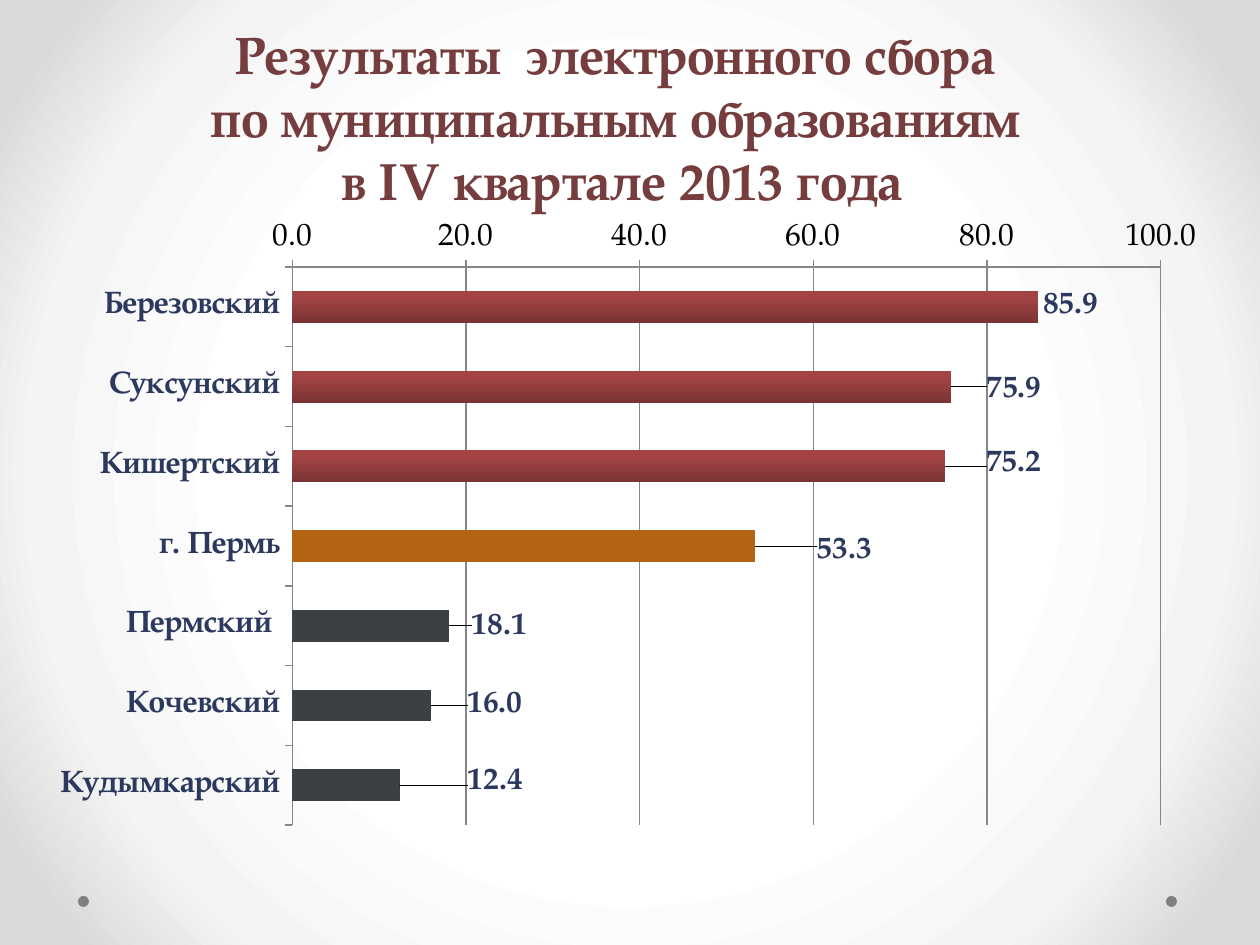
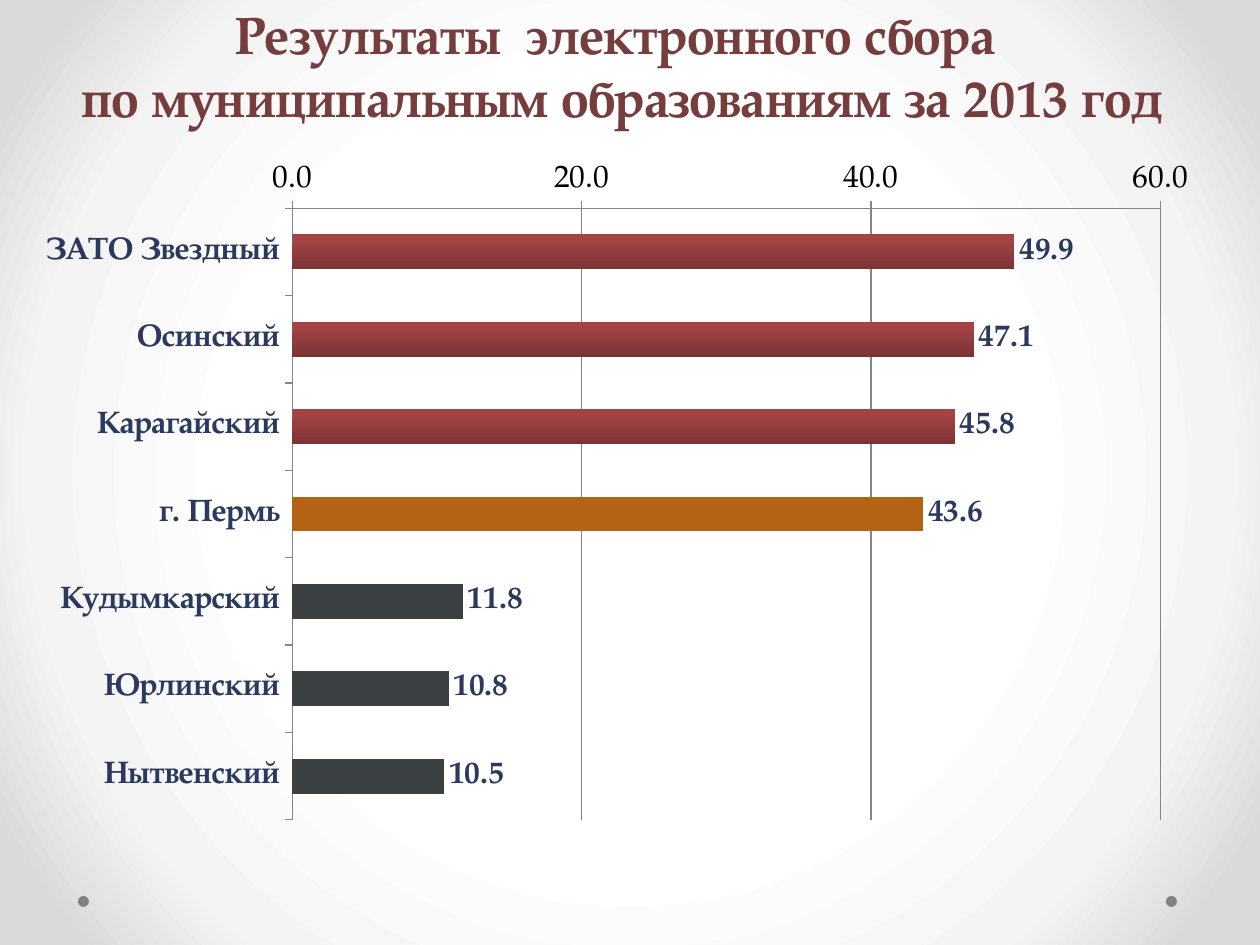
from dataclasses import dataclass

from lxml import etree
from pptx import Presentation
from pptx.chart.chart import Chart
from pptx.chart.data import CategoryChartData
from pptx.dml.color import RGBColor
from pptx.enum.chart import XL_CHART_TYPE as ChartType
from pptx.enum.chart import XL_LABEL_POSITION as LabelPosition
from pptx.enum.chart import XL_TICK_MARK as TickMark
from pptx.enum.shapes import MSO_SHAPE as Shape
from pptx.enum.text import MSO_ANCHOR as Anchor
from pptx.enum.text import MSO_AUTO_SIZE as AutoSize
from pptx.enum.text import PP_ALIGN as Align
from pptx.oxml import parse_xml
from pptx.oxml.ns import nsdecls, qn
from pptx.slide import Slide, SlideMaster
from pptx.util import Emu, Pt

# Shared look
FONT = "TeX Gyre Pagella"
TITLE_COLOR, LABEL_COLOR, AXIS_TEXT = "753D3D", "2C395E", "000000"
GRID_COLOR, DOT_COLOR = "868686", "808080"
LEADER_TOP, LEADER_BOTTOM = "A34343", "7A3335"
CITY_COLOR, LAST_COLOR = "B26314", "3B4042"
LEADERS = 3
BACKGROUND_STOPS = ((50, "FFFFFF"), (76, "F4F4F4"), (92, "DADADA"))
PLOT_AREA = {"x": 0.221, "y": 0.045, "w": 0.746, "h": 0.871}
CHART_LEFT, CHART_WIDTH, CHART_BOTTOM = 35, 1164, 879
TITLE_WIDTH = 1245
DOT_LEFTS, DOT_TOP, DOT_SIZE = (78, 1166), 896, 11


@dataclass(frozen=True)
class Ranking:
    title: tuple[str, ...]
    title_top: int
    title_height: int
    chart_top: int
    axis_max: int
    results: dict[str, float]
    label_shifts: tuple[tuple[int, int], ...] = ()  # px, from the second bar on


RANKINGS = (
    Ranking(
        title=("Результаты  электронного сбора ",
               "по муниципальным образованиям ",
               "в IV квартале 2013 года"),
        title_top=0, title_height=217, chart_top=224, axis_max=100,
        results={"Березовский": 85.9, "Суксунский": 75.9, "Кишертский": 75.2,
                 "г. Пермь": 53.3, "Пермский ": 18.1, "Кочевский": 16.0,
                 "Кудымкарский": 12.4},
        label_shifts=((30, 4), (36, -2), (57, 6), (17, 1), (32, 0), (63, -3)),
    ),
    Ranking(
        title=("Результаты  электронного сбора ",
               "по муниципальным образованиям за 2013 год"),
        title_top=26, title_height=108, chart_top=165, axis_max=60,
        results={"ЗАТО Звездный": 49.9, "Осинский": 47.1, "Карагайский": 45.8,
                 "г. Пермь": 43.6, "Кудымкарский": 11.8, "Юрлинский": 10.8,
                 "Нытвенский": 10.5},
    ),
)


def px(length: int) -> Emu:
    return Emu(round(length * 914400 / 126))


def rgb(color: str) -> RGBColor:
    return RGBColor.from_string(color)


def style_font(font, color: str, size: int = 18, bold: bool = False) -> None:
    font.name, font.size, font.bold = FONT, Pt(size), bold
    font.color.rgb = rgb(color)


def style_line(line) -> None:
    line.color.rgb = rgb(GRID_COLOR)
    line.width = Pt(0.75)


def set_background(master: SlideMaster) -> None:
    fill = master.background.fill
    fill.gradient()
    gradient = master.element.find(".//" + qn("p:bgPr")).find(qn("a:gradFill"))
    for child in list(gradient):
        gradient.remove(child)
    stops = etree.SubElement(gradient, qn("a:gsLst"))
    for position, color in BACKGROUND_STOPS:
        stop = etree.SubElement(stops, qn("a:gs"), pos=str(position * 1000))
        etree.SubElement(stop, qn("a:srgbClr"), val=color)
    circle = etree.SubElement(gradient, qn("a:path"))
    circle.set("path", "circle")
    etree.SubElement(circle, qn("a:fillToRect"),
                     {side: "50000" for side in "ltrb"})


def add_dots(page: Slide) -> None:
    for left in DOT_LEFTS:
        dot = page.shapes.add_shape(Shape.OVAL, px(left), px(DOT_TOP),
                                    px(DOT_SIZE), px(DOT_SIZE))
        dot.shadow.inherit = False
        dot.fill.solid()
        dot.fill.fore_color.rgb = rgb(DOT_COLOR)
        dot.line.fill.background()


def set_title(page: Slide, ranking: Ranking) -> None:
    box = page.shapes.title
    box.left, box.top = px(0), px(ranking.title_top)
    box.width, box.height = px(TITLE_WIDTH), px(ranking.title_height)
    frame = box.text_frame
    frame.auto_size, frame.word_wrap = AutoSize.NONE, True
    frame.vertical_anchor = Anchor.BOTTOM
    para = frame.paragraphs[0]
    para.alignment = Align.CENTER
    style_font(para.font, TITLE_COLOR, 30, bold=True)
    for number, line in enumerate(ranking.title):
        if number:
            para.add_line_break()
        para.add_run().text = line


def manual_layout(inner: bool = False, **fractions: float):
    """Placement in fractions of the chart's size."""
    layout = parse_xml(f"<c:layout {nsdecls('c')}><c:manualLayout/></c:layout>")
    settings = {"layoutTarget": "inner", "xMode": "edge", "yMode": "edge"} if inner else {}
    for tag, value in {**settings, **fractions}.items():
        etree.SubElement(layout[0], qn(f"c:{tag}"), val=str(value))
    return layout


def style_axes(chart: Chart, axis_max: int) -> None:
    names, values = chart.category_axis, chart.value_axis
    names.reverse_order = True
    values.minimum_scale, values.maximum_scale = 0, axis_max
    values.major_unit = 20
    values.has_major_gridlines = True
    style_line(values.major_gridlines.format.line)
    values.tick_labels.number_format = "0.0"
    values.tick_labels.number_format_is_linked = False
    for axis, color, bold in ((names, LABEL_COLOR, True), (values, AXIS_TEXT, False)):
        axis.major_tick_mark, axis.minor_tick_mark = TickMark.OUTSIDE, TickMark.NONE
        style_line(axis.format.line)
        style_font(axis.tick_labels.font, color, bold=bold)


def color_bars(series, count: int) -> None:
    for index in range(count):
        fill = series.points[index].format.fill
        if index < LEADERS:
            fill.gradient()
            fill.gradient_angle = 270
            for stop, color in zip(fill.gradient_stops, (LEADER_TOP, LEADER_BOTTOM)):
                stop.color.rgb = rgb(color)
            fill.gradient_stops[0].position = 0.2
            fill.gradient_stops[1].position = 1
        else:
            fill.solid()
            fill.fore_color.rgb = rgb(CITY_COLOR if index == LEADERS else LAST_COLOR)


def label_bars(chart: Chart, ranking: Ranking, height: int) -> None:
    series = chart.plots[0].series[0]
    labels = series.data_labels
    labels.show_value = True
    labels.number_format, labels.number_format_is_linked = "0.0", False
    labels.position = LabelPosition.OUTSIDE_END
    style_font(labels.font, LABEL_COLOR, bold=True)
    for index in range(1, len(ranking.label_shifts) + 1):
        label = series.points[index].data_label
        style_font(label.font, LABEL_COLOR, bold=True)
        label.position = LabelPosition.OUTSIDE_END
    for element, (right, down) in zip(chart.element.iter(qn("c:dLbl")),
                                      ranking.label_shifts):
        element.insert(1, manual_layout(x=round(right / CHART_WIDTH, 3),
                                        y=round(down / height, 3)))


def add_ranking_chart(page: Slide, ranking: Ranking) -> None:
    data = CategoryChartData(number_format="0.0")
    data.categories = list(ranking.results)
    data.add_series("Series 1", list(ranking.results.values()))
    height = CHART_BOTTOM - ranking.chart_top
    chart = page.shapes.add_chart(
        ChartType.BAR_CLUSTERED, px(CHART_LEFT), px(ranking.chart_top),
        px(CHART_WIDTH), px(height), data).chart
    chart.has_legend = chart.has_title = False
    style_font(chart.font, AXIS_TEXT)
    plot = chart.plots[0]
    plot.gap_width, plot.vary_by_categories = 150, False

    plot_area = chart.element.find(".//" + qn("c:plotArea"))
    for layout in plot_area.findall(qn("c:layout")):
        plot_area.remove(layout)
    plot_area.insert(0, manual_layout(inner=True, **PLOT_AREA))

    style_axes(chart, ranking.axis_max)
    color_bars(plot.series[0], len(ranking.results))
    label_bars(chart, ranking, height)


def main() -> None:
    deck = Presentation()
    deck.slide_width, deck.slide_height = px(1260), px(945)
    set_background(deck.slide_master)
    title_only = deck.slide_layouts[5]
    for ranking in RANKINGS:
        page = deck.slides.add_slide(title_only)
        add_dots(page)
        set_title(page, ranking)
        add_ranking_chart(page, ranking)
    deck.save("out.pptx")


if __name__ == "__main__":
    main()
